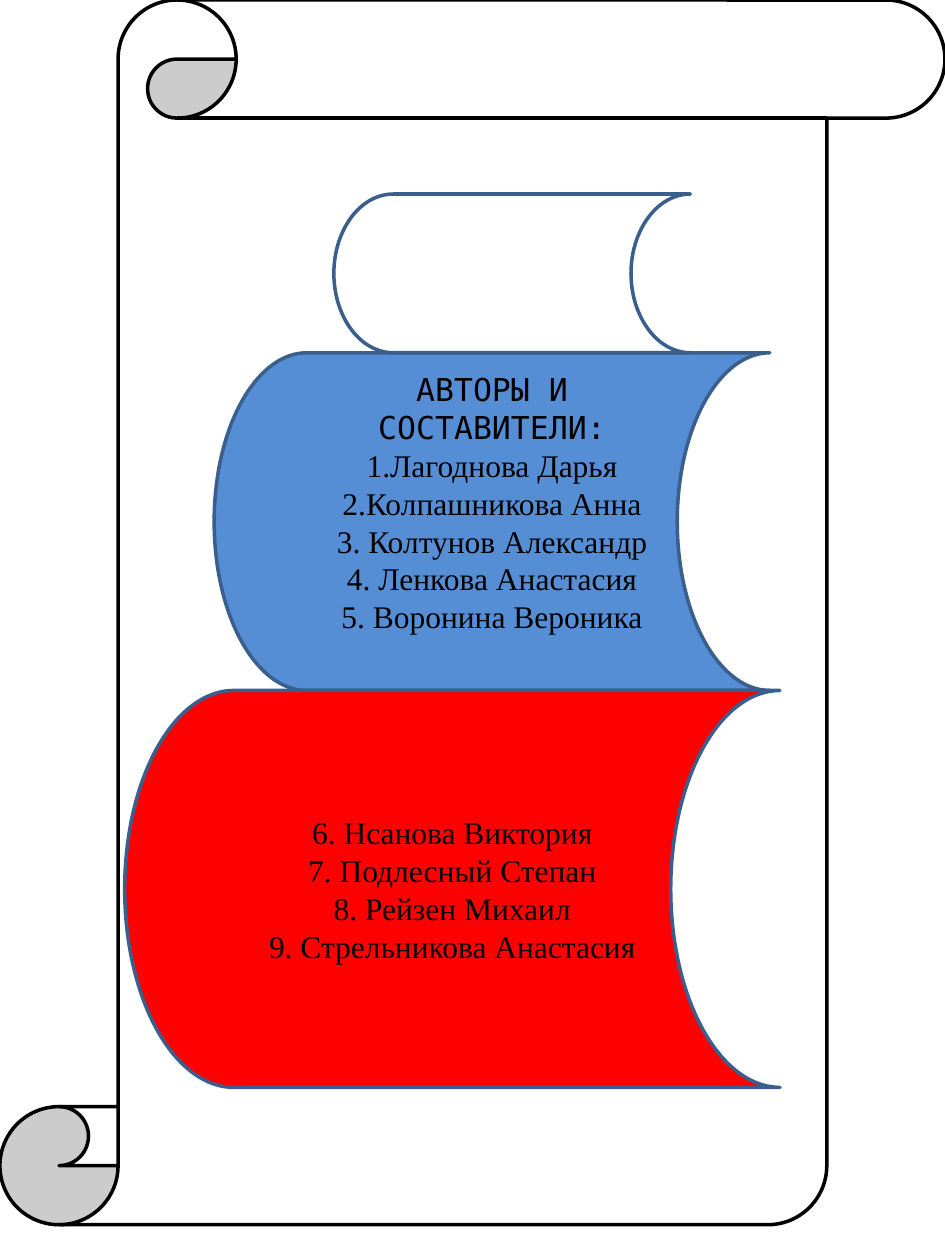
from dataclasses import dataclass

from pptx import Presentation
from pptx.dml.color import RGBColor
from pptx.enum.shapes import MSO_SHAPE
from pptx.enum.text import MSO_ANCHOR, PP_ALIGN
from pptx.util import Inches, Pt

SCROLL = MSO_SHAPE.VERTICAL_SCROLL
BOOK = MSO_SHAPE.FLOWCHART_STORED_DATA
MIDDLE = MSO_ANCHOR.MIDDLE
CENTER = PP_ALIGN.CENTER
PAGE_WIDTH, PAGE_HEIGHT = 7.5, 10


@dataclass(frozen=True)
class Theme:
    paper: str = "FFFFFF"
    ink: str = "000000"
    edge: str = "3A5F8C"
    blue: str = "558ED5"
    red: str = "FF0000"
    heading_font: str = "DejaVu Sans Mono"
    name_font: str = "Times New Roman"
    text_size: int = 18
    line_width: int = 2


THEME = Theme()

HEADING = "АВТОРЫ И СОСТАВИТЕЛИ:"
FIRST_NAMES = [
    "1.Лагоднова Дарья",
    "2.Колпашникова Анна",
    "3. Колтунов Александр",
    "4. Ленкова Анастасия",
    "5. Воронина Вероника",
]
SECOND_NAMES = [
    "6. Нсанова Виктория",
    "7. Подлесный Степан",
    "8. Рейзен Михаил",
    "9. Стрельникова Анастасия",
]


def add_outline(page, kind, box, fill, line):
    shape = page.shapes.add_shape(kind, *(Inches(length) for length in box))
    shape.shadow.inherit = False
    shape.fill.solid()
    shape.fill.fore_color.rgb = RGBColor.from_string(fill)
    shape.line.color.rgb = RGBColor.from_string(line)
    shape.line.width = Pt(THEME.line_width)
    return shape


def write_text(para, text, *, font, size=THEME.text_size, color=THEME.ink, hanging=0):
    para.alignment = CENTER
    if hanging:
        properties = para._p.get_or_add_pPr()
        properties.set("marL", str(Inches(hanging)))
        properties.set("indent", str(-Inches(hanging)))
    span = para.add_run()
    span.text = text
    span.font.name = font
    span.font.size = Pt(size)
    span.font.color.rgb = RGBColor.from_string(color)


def add_book(page, box, fill, heading=None, names=(), bottom_margin=0.05):
    book = add_outline(page, BOOK, box, fill, THEME.edge)
    frame = book.text_frame
    frame.word_wrap = True
    frame.vertical_anchor = MIDDLE
    frame.margin_bottom = Inches(bottom_margin)
    lines = [(heading, THEME.heading_font, 0)] if heading else []
    lines += [(name, THEME.name_font, 0.38) for name in names]
    for index, (text, font, hanging) in enumerate(lines):
        para = frame.add_paragraph() if index else frame.paragraphs[0]
        write_text(para, text, font=font, hanging=hanging)


def add_book_stack(page, left, top):
    top_height, middle_height, bottom_height = 1.26, 2.68, 3.15
    middle_top = top + top_height
    bottom_top = middle_top + middle_height
    add_book(page, (left + 0.71, middle_top, 4.41, middle_height), THEME.blue,
             HEADING, FIRST_NAMES, bottom_margin=0.35)
    add_book(page, (left, bottom_top, 5.2, bottom_height), THEME.red,
             names=SECOND_NAMES)
    add_book(page, (left + 1.66, top, 2.83, top_height), THEME.paper)


def main():
    deck = Presentation()
    deck.slide_width = Inches(PAGE_WIDTH)
    deck.slide_height = Inches(PAGE_HEIGHT)
    page = deck.slides.add_slide(deck.slide_layouts[6])
    add_outline(page, SCROLL, (0, 0, PAGE_WIDTH, 9.72), THEME.paper, THEME.ink)
    add_book_stack(page, 0.99, 1.54)
    deck.save("out.pptx")


if __name__ == "__main__":
    main()
